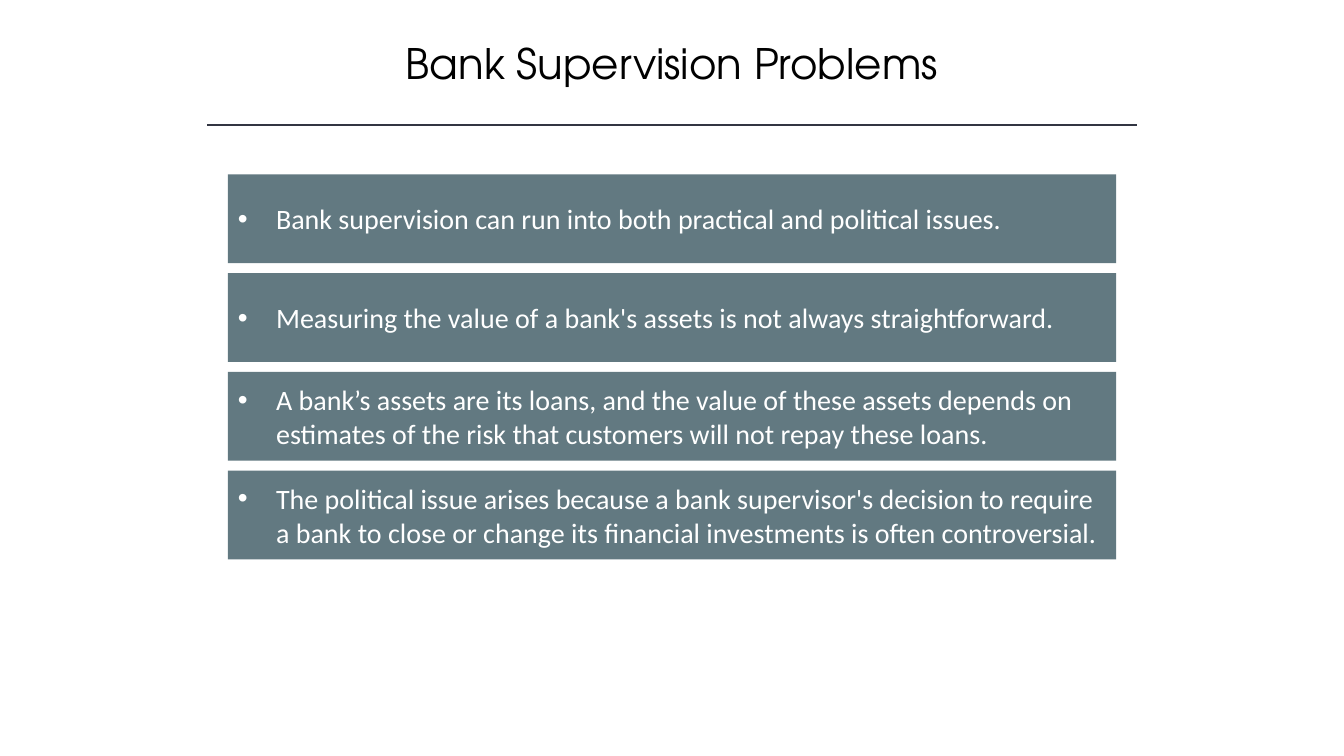
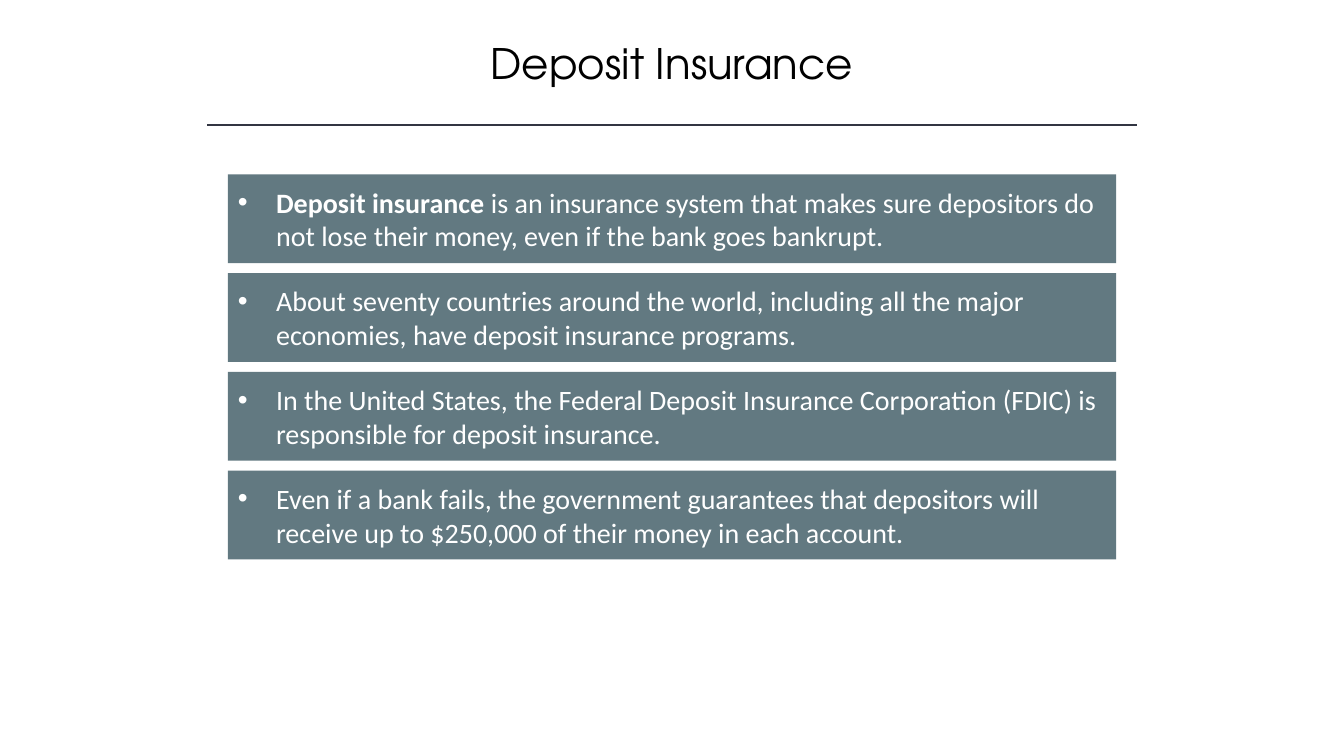
from lxml.etree import SubElement
from pptx import Presentation
from pptx.dml.color import RGBColor
from pptx.enum.shapes import MSO_CONNECTOR, MSO_SHAPE
from pptx.enum.text import MSO_ANCHOR, PP_ALIGN
from pptx.oxml.ns import qn
from pptx.util import Inches, Pt

# Shared look
BLACK = RGBColor(0x00, 0x00, 0x00)
WHITE = RGBColor(0xFF, 0xFF, 0xFF)
SLATE = RGBColor(0x62, 0x79, 0x81)
INK = RGBColor(0x32, 0x35, 0x42)
TITLE_FONT, BODY_FONT = "TeX Gyre Adventor", "Calibri"

# Layout in inches: everything is centred on the slide
SLIDE_WIDTH, SLIDE_HEIGHT = 13.33, 7.5
TITLE_TOP, TITLE_WIDTH, TITLE_HEIGHT = 0.32, 10, 0.61
RULE_TOP, RULE_WIDTH = 1.24, 9.22
CARD_TOP, CARD_WIDTH, CARD_HEIGHT, CARD_PITCH = 1.73, 8.81, 0.88, 0.98
BULLET_INDENT = 0.38

# Each slide: title and cards; a card is a list of (text, bold) spans
SLIDES = [
    ("Bank Supervision Problems", [
        [("Bank supervision can run into both practical and political issues.", False)],
        [("Measuring the value of a bank's assets is not always straightforward.", False)],
        [("A bank’s assets are its loans, and the value of these assets depends on "
          "estimates of the risk that customers will not repay these loans.", False)],
        [("The political issue arises because a bank supervisor's decision to require "
          "a bank to close or change its financial investments is often controversial.",
          False)],
    ]),
    ("Deposit Insurance", [
        [("Deposit insurance ", True),
         ("is an insurance system that makes sure depositors do not lose their money, "
          "even if the bank goes bankrupt.", False)],
        [("About seventy countries around the world, including all the major economies, "
          "have deposit insurance programs.", False)],
        [("In the United States, the Federal Deposit Insurance Corporation (FDIC) is "
          "responsible for deposit insurance.", False)],
        [("Even if a bank fails, the government guarantees that depositors will receive "
          "up to $250,000 of their money in each account.", False)],
    ]),
]


def centred_left(width):
    return (SLIDE_WIDTH - width) / 2


def centred_box(top, width, height):
    return [Inches(length) for length in (centred_left(width), top, width, height)]


def set_font(para, name, size, color):
    para.font.name = name
    para.font.size = Pt(size)
    para.font.color.rgb = color


def add_bullet(para):
    properties = para._p.get_or_add_pPr()
    properties.set("marL", str(Inches(BULLET_INDENT)))
    properties.set("indent", str(-Inches(BULLET_INDENT)))
    SubElement(properties, qn("a:buFont"), typeface="Arial")
    SubElement(properties, qn("a:buChar"), char="•")


def add_title(page, text):
    box = page.shapes.add_textbox(*centred_box(TITLE_TOP, TITLE_WIDTH, TITLE_HEIGHT))
    box.text_frame.word_wrap = True
    para = box.text_frame.paragraphs[0]
    para.text = text
    para.alignment = PP_ALIGN.CENTER
    set_font(para, TITLE_FONT, 30, BLACK)


def add_rule(page):
    left, top, width, _ = centred_box(RULE_TOP, RULE_WIDTH, 0)
    rule = page.shapes.add_connector(MSO_CONNECTOR.STRAIGHT, left, top, left + width, top)
    rule.line.color.rgb = INK
    rule.line.width = Pt(1)
    SubElement(rule._element.spPr, qn("a:effectLst"))


def add_card(page, row, spans):
    top = CARD_TOP + row * CARD_PITCH
    card = page.shapes.add_shape(MSO_SHAPE.RECTANGLE,
                                 *centred_box(top, CARD_WIDTH, CARD_HEIGHT))
    card.shadow.inherit = False
    card.fill.solid()
    card.fill.fore_color.rgb = SLATE
    card.line.fill.background()
    frame = card.text_frame
    frame.word_wrap = True
    frame.vertical_anchor = MSO_ANCHOR.MIDDLE
    para = frame.paragraphs[0]
    para.alignment = PP_ALIGN.LEFT
    add_bullet(para)
    set_font(para, BODY_FONT, 20, WHITE)
    for text, bold in spans:
        span = para.add_run()
        span.text = text
        span.font.bold = bold


def main():
    deck = Presentation()
    deck.slide_width, deck.slide_height = Inches(SLIDE_WIDTH), Inches(SLIDE_HEIGHT)
    blank = deck.slide_layouts[6]
    for title, cards in SLIDES:
        page = deck.slides.add_slide(blank)
        add_title(page, title)
        add_rule(page)
        for row, spans in enumerate(cards):
            add_card(page, row, spans)
    deck.save("out.pptx")


if __name__ == "__main__":
    main()
